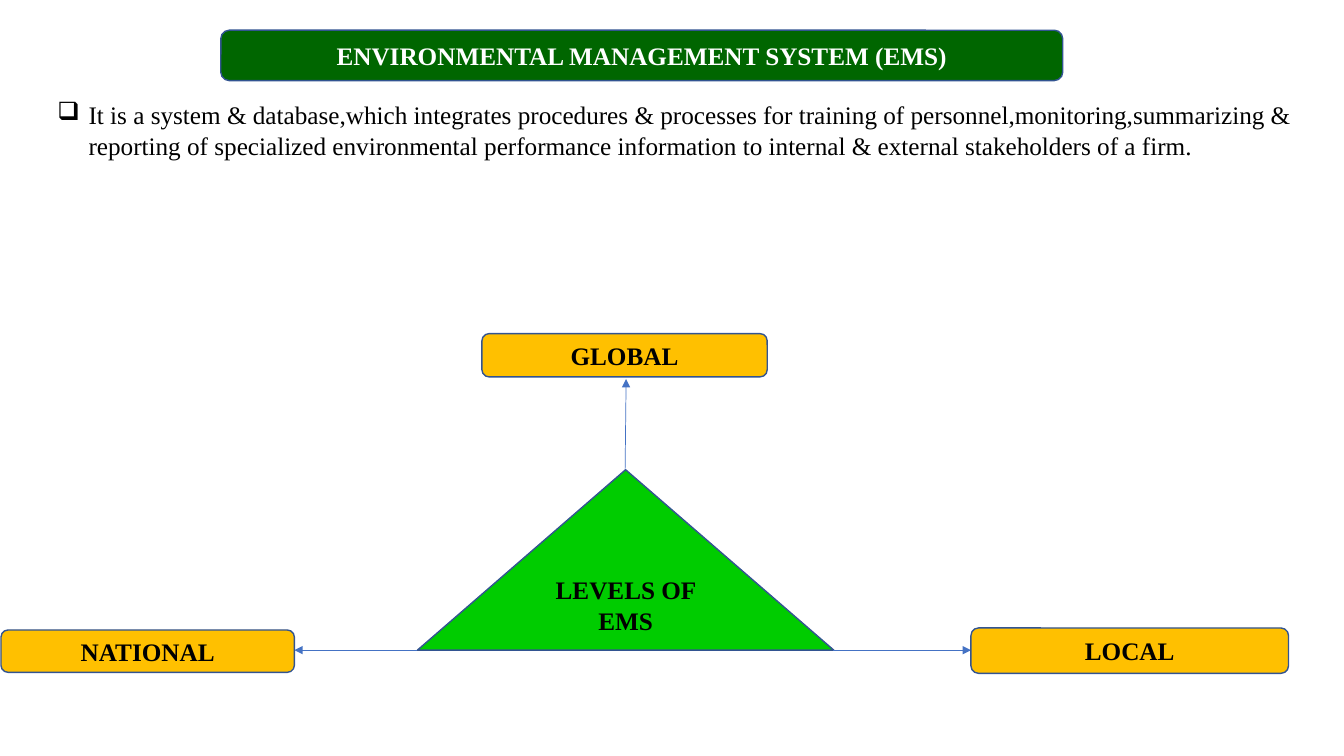
from lxml import etree
from pptx import Presentation
from pptx.dml.color import RGBColor
from pptx.enum.shapes import MSO_CONNECTOR, MSO_SHAPE
from pptx.enum.text import MSO_ANCHOR, MSO_AUTO_SIZE, PP_ALIGN
from pptx.oxml.ns import qn
from pptx.util import Inches, Pt

ROUNDED, TRIANGLE = MSO_SHAPE.ROUNDED_RECTANGLE, MSO_SHAPE.ISOSCELES_TRIANGLE
STRAIGHT = MSO_CONNECTOR.STRAIGHT
CENTER, LEFT = PP_ALIGN.CENTER, PP_ALIGN.LEFT
MIDDLE, TOP = MSO_ANCHOR.MIDDLE, MSO_ANCHOR.TOP
NO_AUTOFIT = MSO_AUTO_SIZE.NONE

WHITE = RGBColor(0xFF, 0xFF, 0xFF)
BLACK = RGBColor(0, 0, 0)
DARK_GREEN = RGBColor(0x00, 0x66, 0x00)
GREEN = RGBColor(0x00, 0xCC, 0x00)
AMBER = RGBColor(0xFF, 0xC0, 0x00)
OUTLINE = RGBColor(0x32, 0x54, 0x91)
ARROW_BLUE = RGBColor(0x44, 0x72, 0xC4)

FONT = "Times New Roman"
TITLE = "ENVIRONMENTAL MANAGEMENT SYSTEM (EMS)"
DEFINITION = (
    "It is a system & database,which integrates procedures & processes for "
    "training of personnel,monitoring,summarizing & reporting of specialized "
    "environmental performance information to internal & external "
    "stakeholders of a firm."
)
BANNER_BOX = (2.19, 0.3, 8.35, 0.5)
DEFINITION_BOX = (0.47, 0.94, 12.59, 0.71)
TRIANGLE_BOX = (4.14, 4.66, 4.13, 1.79)
LEVELS = [
    # name, box, arrow start, arrow end
    ("GLOBAL", (4.78, 3.31, 2.83, 0.43), (6.2, 4.66), (6.21, 3.76)),
    ("LOCAL", (9.63, 6.23, 3.15, 0.45), (8.26, 6.45), (9.63, 6.45)),
    ("NATIONAL", (0.01, 6.25, 2.91, 0.42), (4.14, 6.45), (2.92, 6.45)),
]


def inches(values):
    return [Inches(v) for v in values]


def write(sp, text, color=BLACK, bold=True, align=CENTER, anchor=MIDDLE):
    """Put one run of text into a shape and return its paragraph."""
    tf = sp.text_frame
    tf.word_wrap = True
    tf.auto_size = NO_AUTOFIT
    tf.vertical_anchor = anchor
    p = tf.paragraphs[0]
    p.alignment = align
    r = p.add_run()
    r.text = text
    r.font.name = FONT
    r.font.size = Pt(18)
    r.font.bold = bold
    r.font.color.rgb = color
    return p


def add_block(s, kind, box, fill):
    sp = s.shapes.add_shape(kind, *inches(box))
    sp.shadow.inherit = False
    sp.fill.solid()
    sp.fill.fore_color.rgb = fill
    sp.line.color.rgb = OUTLINE
    sp.line.width = Pt(1)
    return sp


def add_title(s):
    """Lay the title placeholder over a rounded banner."""
    title = s.shapes.title
    title.left, title.top, title.width, title.height = inches(BANNER_BOX)
    write(title, TITLE, WHITE)
    banner = add_block(s, ROUNDED, BANNER_BOX, DARK_GREEN)
    title.element.addprevious(banner.element)


def add_definition(s):
    sp = s.shapes.add_textbox(*inches(DEFINITION_BOX))
    p = write(sp, DEFINITION, bold=False, align=LEFT, anchor=TOP)
    pPr = p._p.get_or_add_pPr()
    pPr.set("marL", str(Inches(0.31)))
    pPr.set("indent", str(Inches(-0.31)))
    etree.SubElement(pPr, qn("a:buChar"), char="❑")


def add_arrow(s, start, end):
    line = s.shapes.add_connector(STRAIGHT, *inches(start + end))
    line.line.color.rgb = ARROW_BLUE
    line.line.width = Pt(0.5)
    etree.SubElement(line.line._get_or_add_ln(), qn("a:tailEnd"), type="triangle")
    etree.SubElement(line._element.spPr, qn("a:effectLst"))


def main():
    prs = Presentation()
    prs.slide_width, prs.slide_height = inches((13.33, 7.5))
    s = prs.slides.add_slide(prs.slide_layouts.get_by_name("Title Only"))
    add_title(s)
    add_definition(s)
    write(add_block(s, TRIANGLE, TRIANGLE_BOX, GREEN), "LEVELS OF EMS")
    for name, box, start, end in LEVELS:
        add_arrow(s, start, end)
        write(add_block(s, ROUNDED, box, AMBER), name)
    prs.save("out.pptx")


if __name__ == "__main__":
    main()
